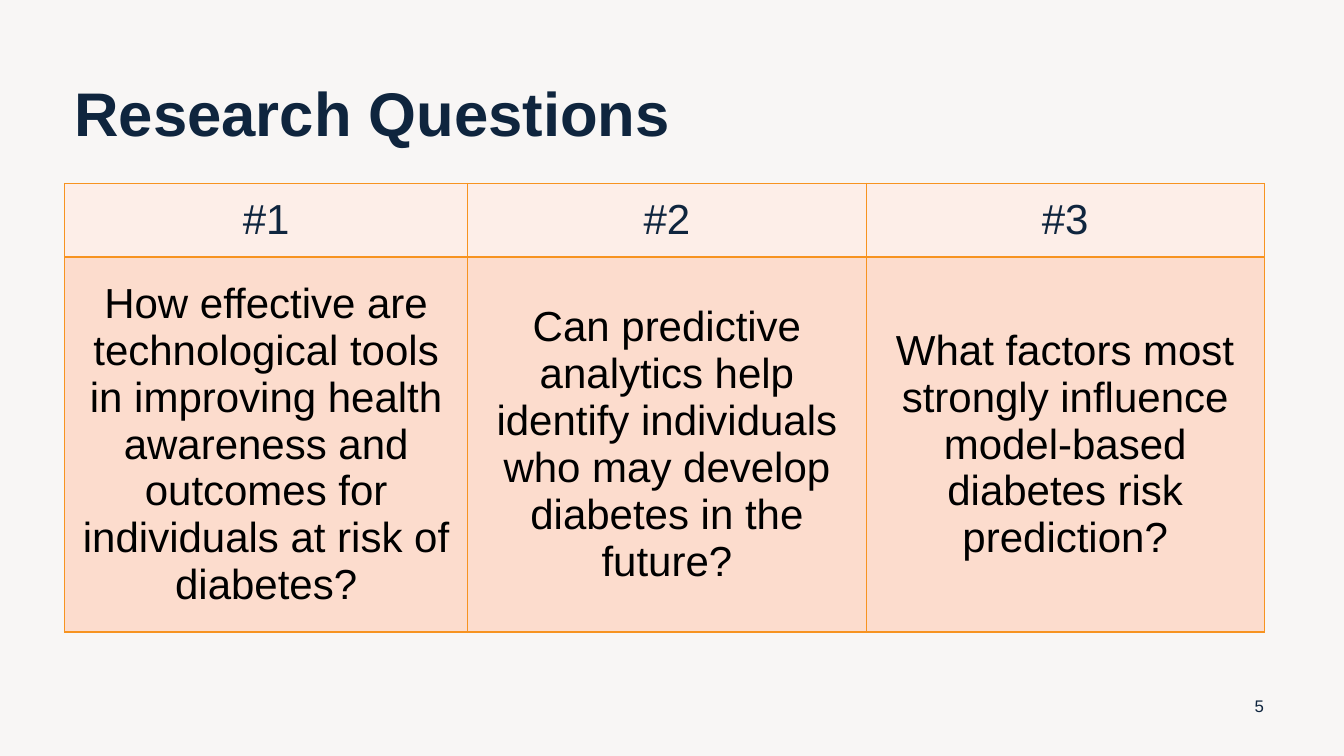
"""Build the research questions slide."""
from lxml.etree import SubElement as Sub
from pptx import Presentation as Deck
from pptx.dml.color import RGBColor as Rgb
from pptx.enum.text import MSO_ANCHOR as Anchor, PP_ALIGN as Align
from pptx.oxml.ns import qn
from pptx.util import Inches, Pt

INK = {"back": "F8F6F5", "navy": "0F253E", "black": "000000",
       "line": "F79320", "head": "FDEEE8", "body": "FCDCCD"}
ASKS = {
    "#1": "How effective are technological tools in improving health awareness "
          "and outcomes for individuals at risk of diabetes?",
    "#2": "Can predictive analytics help identify individuals who may develop "
          "diabetes in the future?",
    "#3": "What factors most strongly influence model-based diabetes risk prediction?",
}


def write(frame, text, size=30, color="navy", bold=False, align=Align.CENTER,
          line=None, after=None):
    para = frame.paragraphs[0]
    para.alignment = align
    if line:
        para.line_spacing = line
    if after:
        para.space_after = Pt(after)
    run = para.add_run()
    run.text = text
    font = run.font
    font.name, font.size, font.bold = "Arial", Pt(size), bold
    font.color.rgb = Rgb.from_string(INK[color])


class Page:
    def __init__(self, deck):
        self.slide = deck.slides.add_slide(deck.slide_layouts[6])
        fill = self.slide.background.fill
        fill.solid()
        fill.fore_color.rgb = Rgb.from_string(INK["back"])

    def text(self, box, words, **form):
        frame = self.slide.shapes.add_textbox(*map(Inches, box)).text_frame
        frame.word_wrap = True
        frame.vertical_anchor = Anchor.MIDDLE
        write(frame, words, **form)

    def edge(self, cell):
        props = cell._tc.get_or_add_tcPr()
        for side in ("lnL", "lnR", "lnT", "lnB"):
            line = Sub(props, qn("a:" + side), w=str(Pt(1)))
            Sub(Sub(line, qn("a:solidFill")), qn("a:srgbClr"), val=INK["line"])

    def cell(self, cell, words, fill, color):
        cell.margin_left = cell.margin_right = Inches(0.17)
        cell.margin_top = cell.margin_bottom = Inches(0.08)
        cell.vertical_anchor = Anchor.MIDDLE
        self.edge(cell)
        cell.fill.solid()
        cell.fill.fore_color.rgb = Rgb.from_string(INK[fill])
        write(cell.text_frame, words, color=color)

    def table(self, box, cols, rows, data):
        grid = self.slide.shapes.add_table(len(rows), len(cols), *map(Inches, box)).table
        grid.first_row = grid.horz_banding = False
        for col, wide in zip(grid.columns, cols):
            col.width = Inches(wide)
        for row, high in zip(grid.rows, rows):
            row.height = Inches(high)
        looks = (("head", "navy"), ("body", "black"))
        for row, line, look in zip(grid.rows, data, looks):
            for cell, words in zip(row.cells, line):
                self.cell(cell, words, *look)


def main():
    deck = Deck()
    deck.slide_width, deck.slide_height = Inches(13.33), Inches(7.5)
    page = Page(deck)
    page.text((0.64, 0.55, 11.5, 1.22), "Research Questions", size=44, bold=True,
              align=Align.LEFT, line=0.9)
    page.text((12.24, 6.8, 0.5, 0.4), "5", size=12, after=6)
    page.table((0.64, 1.82, 11.9, 4.45), (4, 3.95, 3.95), (0.73, 3.72),
               (ASKS.keys(), ASKS.values()))
    deck.save("out.pptx")


if __name__ == "__main__":
    main()
